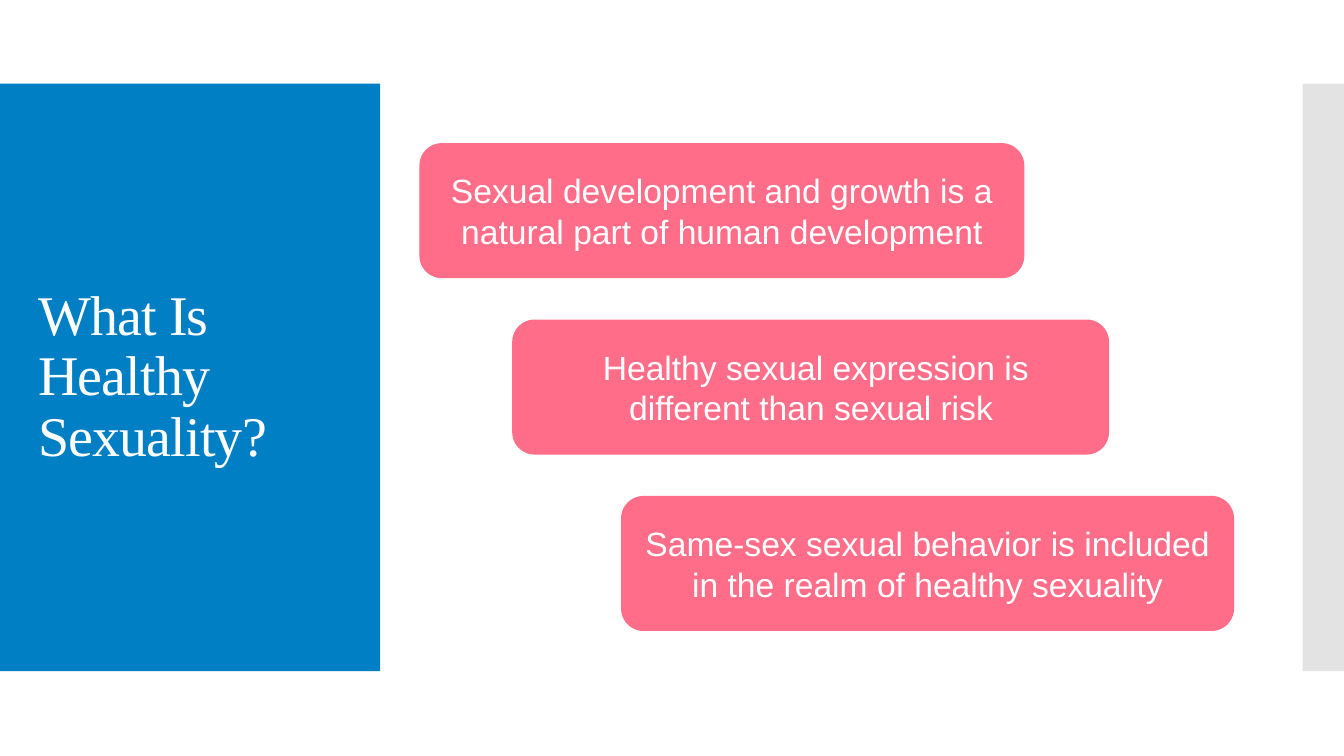
from dataclasses import dataclass

from lxml import etree
from pptx import Presentation
from pptx.dml.color import RGBColor
from pptx.enum.shapes import MSO_SHAPE
from pptx.enum.text import MSO_ANCHOR, PP_ALIGN
from pptx.oxml.ns import qn
from pptx.shapes.autoshape import Shape
from pptx.slide import Slide
from pptx.util import Inches, Pt

RECTANGLE = MSO_SHAPE.RECTANGLE
ROUNDED = MSO_SHAPE.ROUNDED_RECTANGLE
MIDDLE = MSO_ANCHOR.MIDDLE
LEFT, CENTER = PP_ALIGN.LEFT, PP_ALIGN.CENTER


@dataclass(frozen=True)
class Theme:
    panel: str = "007FC4"
    edge: str = "C8C8C8"
    card: str = "FF6D88"
    text: str = "FFFFFF"
    title_font: str = "Times New Roman"
    body_font: str = "Arial"
    title_size: float = 40
    body_size: float = 24


@dataclass(frozen=True)
class Box:
    left: float
    top: float
    width: float
    height: float


@dataclass(frozen=True)
class Statement:
    text: str
    left: float
    width: float
    left_inset: float = 0.1


THEME = Theme()
BAND_TOP, BAND_HEIGHT = 0.83, 5.83
CARD_TOP, CARD_HEIGHT, CARD_PITCH = 1.42, 1.34, 1.75

STATEMENTS = [
    Statement("Sexual development and growth is a natural part of human development", 4.16, 6),
    Statement("Healthy sexual expression is different than sexual risk ", 5.08, 5.92, 0.2),
    Statement("Same-sex sexual behavior is included in the realm of healthy sexuality", 6.16, 6.08),
]


def add_block(slide: Slide, box: Box, color: str, outline: MSO_SHAPE = RECTANGLE,
              opacity: int = 100) -> Shape:
    """Add a filled shape without line or shadow; opacity is a percentage."""
    block = slide.shapes.add_shape(outline, Inches(box.left), Inches(box.top),
                                   Inches(box.width), Inches(box.height))
    block.shadow.inherit = False
    block.line.fill.background()
    block.fill.solid()
    block.fill.fore_color.rgb = RGBColor.from_string(color)
    if opacity < 100:
        fill_color = block.fill._xPr.find(qn("a:solidFill"))[0]
        etree.SubElement(fill_color, qn("a:alpha"), val=str(opacity * 1000))
    return block


def write_text(holder: Shape, text: str, *, font: str, size: float,
               align: PP_ALIGN = LEFT, line_spacing: float = 1.0, tracking: float = 0,
               insets: tuple[float, float, float, float] = (0.1, 0.05, 0.1, 0.05)) -> None:
    """Write one paragraph; insets run left, top, right, bottom, tracking is in points."""
    frame = holder.text_frame
    frame.word_wrap = True
    frame.vertical_anchor = MIDDLE
    (frame.margin_left, frame.margin_top,
     frame.margin_right, frame.margin_bottom) = map(Inches, insets)
    paragraph = frame.paragraphs[0]
    paragraph.alignment = align
    paragraph.line_spacing = line_spacing
    run = paragraph.add_run()
    run.text = text
    run.font.name = font
    run.font.size = Pt(size)
    run.font.color.rgb = RGBColor.from_string(THEME.text)
    if tracking:
        run.font._element.set("spc", str(round(tracking * 100)))


def add_title(slide: Slide) -> None:
    title = slide.shapes.add_textbox(Inches(0.28), Inches(1.23), Inches(3.22), Inches(5.03))
    write_text(title, "What Is Healthy Sexuality?", font=THEME.title_font,
               size=THEME.title_size, line_spacing=0.9, tracking=-0.6)


def add_statement(slide: Slide, statement: Statement, row: int) -> None:
    box = Box(statement.left, CARD_TOP + row * CARD_PITCH, statement.width, CARD_HEIGHT)
    card = add_block(slide, box, THEME.card, ROUNDED)
    write_text(card, statement.text, font=THEME.body_font, size=THEME.body_size,
               align=CENTER, insets=(statement.left_inset, 0.2, 0.1, 0.2))


def main() -> None:
    presentation = Presentation()
    presentation.slide_width = Inches(13.33)
    presentation.slide_height = Inches(7.5)
    slide = presentation.slides.add_slide(presentation.slide_layouts[6])

    add_block(slide, Box(0, BAND_TOP, 3.77, BAND_HEIGHT), THEME.panel)
    add_block(slide, Box(12.92, BAND_TOP, 0.41, BAND_HEIGHT), THEME.edge, opacity=50)
    add_title(slide)
    for row, statement in enumerate(STATEMENTS):
        add_statement(slide, statement, row)

    presentation.save("out.pptx")


if __name__ == "__main__":
    main()
